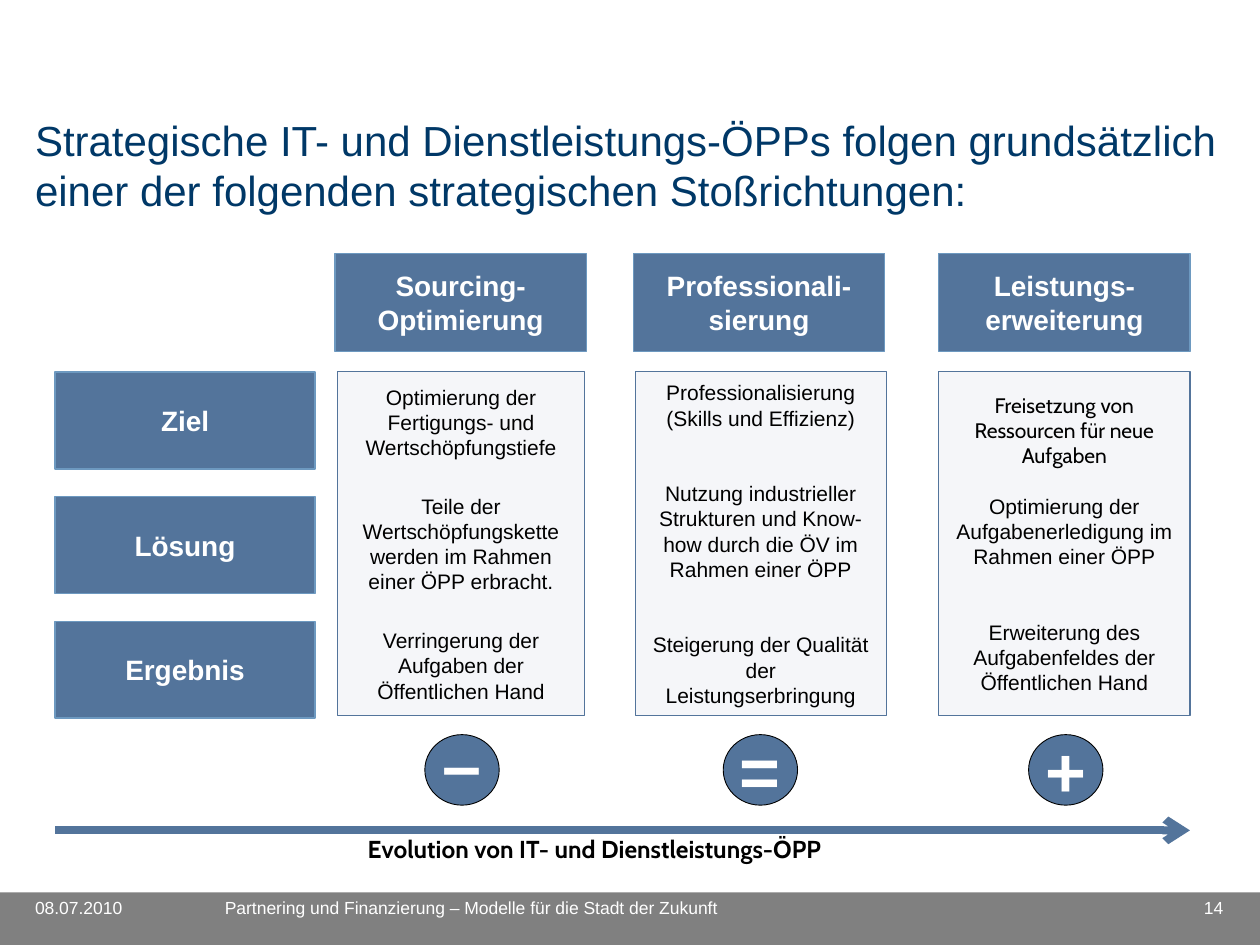
from dataclasses import dataclass

from lxml.etree import SubElement
from pptx import Presentation
from pptx.dml.color import RGBColor
from pptx.enum.shapes import MSO_CONNECTOR, MSO_SHAPE
from pptx.enum.text import MSO_ANCHOR, PP_ALIGN
from pptx.oxml.ns import qn
from pptx.util import Pt


@dataclass(frozen=True)
class Theme:
    blue: str = "53749B"
    edge: str = "6D99C0"
    panel: str = "F5F6F9"
    title: str = "003867"
    footer: str = "808080"
    white: str = "FFFFFF"
    black: str = "000000"
    font: str = "Arial"
    accent_font: str = "Cabin"
    title_size: int = 24
    heading_size: int = 16
    caption_size: int = 14
    body_size: int = 12
    footer_size: int = 10
    sign_size: int = 40
    title_pitch: float = 28.6
    heading_pitch: float = 19.2
    body_pitch: float = 14.4


theme = Theme()
prs = Presentation()
prs.slide_width, prs.slide_height = Pt(720), Pt(540)
slide = prs.slides.add_slide(prs.slide_layouts[6])


def add_block(preset, left, top, width, height, fill, line=None, line_width=0.75):
    block = slide.shapes.add_shape(preset, Pt(left), Pt(top), Pt(width), Pt(height))
    block.shadow.inherit = False
    block.fill.solid()
    block.fill.fore_color.rgb = RGBColor.from_string(fill)
    if line:
        block.line.color.rgb = RGBColor.from_string(line)
        block.line.width = Pt(line_width)
    else:
        block.line.fill.background()
    block.text_frame.vertical_anchor = MSO_ANCHOR.MIDDLE
    return block.text_frame


def write(frame, texts, size, color, bold=False, align=PP_ALIGN.CENTER,
          pitch=None, gaps=(0,), fonts=(theme.font,), inset=None, wrap=True):
    """Fill a frame; gaps and fonts hold one value per paragraph, the last one repeating."""
    frame.word_wrap = wrap
    if inset is not None:
        frame.margin_left = frame.margin_right = Pt(inset)
        frame.margin_top = frame.margin_bottom = Pt(inset)
    for i, text in enumerate(texts):
        paragraph = frame.paragraphs[0] if i == 0 else frame.add_paragraph()
        paragraph.text = text
        paragraph.alignment = align
        if pitch:
            paragraph.line_spacing = Pt(pitch)
        if i:
            paragraph.space_before = Pt(gaps[min(i, len(gaps)) - 1])
        font = paragraph.font
        font.name = fonts[min(i, len(fonts) - 1)]
        font.size, font.bold = Pt(size), bold
        font.color.rgb = RGBColor.from_string(color)


add_block(MSO_SHAPE.RECTANGLE, 0, 510, 720, 30, theme.footer)

title = slide.shapes.add_textbox(Pt(20), Pt(65.5), Pt(677.5), Pt(76.3))
write(title.text_frame,
      ["Strategische IT- und Dienstleistungs-ÖPPs folgen grundsätzlich "
       "einer der folgenden strategischen Stoßrichtungen:"],
      theme.title_size, theme.title, align=PP_ALIGN.LEFT, pitch=theme.title_pitch, inset=0)

# Columns: heading left, panel left, panel width, heading, sign, texts, gaps, fonts
columns = [
    (191.5, 193, 141, "Sourcing-\vOptimierung", "–",
     ["Optimierung der Fertigungs- und Wertschöpfungstiefe",
      "Teile der Wertschöpfungskette werden im Rahmen einer ÖPP erbracht.",
      "Verringerung der Aufgaben der Öffentlichen Hand"],
     (19.2,), (theme.font,)),
    (362, 363, 143.5, "Professionali-\vsierung", "=",
     ["Professionalisierung\v(Skills und Effizienz)",
      "Nutzung industrieller Strukturen und Know-how durch die ÖV im Rahmen einer ÖPP",
      "Steigerung der Qualität der Leistungserbringung"],
     (28.8,), (theme.font,)),
    (536.5, 536.5, 143.5, "Leistungs-\verweiterung", "+",
     ["Freisetzung von Ressourcen für neue Aufgaben",
      "Optimierung der Aufgabenerledigung im Rahmen einer ÖPP",
      "Erweiterung des Aufgabenfeldes der Öffentlichen Hand"],
     (14.4, 28.8), (theme.accent_font, theme.font)),
]
for left, panel_left, panel_width, heading, sign, texts, gaps, fonts in columns:
    header = add_block(MSO_SHAPE.RECTANGLE, left, 144.75, 143.5, 56, theme.blue, theme.edge)
    write(header, [heading], theme.heading_size, theme.white, bold=True,
          pitch=theme.heading_pitch)
    panel = add_block(MSO_SHAPE.RECTANGLE, panel_left, 212.4, panel_width, 196.6,
                      theme.panel, theme.blue)
    write(panel, texts, theme.body_size, theme.black, pitch=theme.body_pitch,
          gaps=gaps, fonts=fonts)
    circle = add_block(MSO_SHAPE.OVAL, left + 51.25, 419.8, 42.5, 40.3,
                       theme.blue, theme.black, 0.5)
    write(circle, [sign], theme.sign_size, theme.white, bold=True, inset=0, wrap=False,
          pitch=40 if sign == "–" else None)

for row, label in enumerate(["Ziel", "Lösung", "Ergebnis"]):
    stage = add_block(MSO_SHAPE.RECTANGLE, 31.5, 212.6 + row * 71.2, 148.5, 55.4,
                      theme.blue, theme.edge)
    write(stage, [label], theme.heading_size, theme.white, bold=True)

evolution = slide.shapes.add_connector(
    MSO_CONNECTOR.STRAIGHT, Pt(31.5), Pt(474.5), Pt(680), Pt(474.5))
evolution.line.color.rgb = RGBColor.from_string(theme.blue)
evolution.line.width = Pt(4.5)
SubElement(evolution.line._get_or_add_ln(), qn("a:tailEnd"), type="arrow")
SubElement(evolution._element.spPr, qn("a:effectLst"))

caption = slide.shapes.add_textbox(Pt(203), Pt(473), Pt(301), Pt(24.5))
write(caption.text_frame, ["Evolution von IT- und Dienstleistungs-ÖPP"],
      theme.caption_size, theme.black, bold=True, align=PP_ALIGN.LEFT,
      fonts=(theme.accent_font,))

footer_items = [
    (645, 54, "14", PP_ALIGN.RIGHT),
    (20, 96, "08.07.2010", PP_ALIGN.LEFT),
    (128.5, 502, "Partnering und Finanzierung – Modelle für die Stadt der Zukunft",
     PP_ALIGN.LEFT),
]
for left, width, text, align in footer_items:
    item = slide.shapes.add_textbox(Pt(left), Pt(512.6), Pt(width), Pt(23.8))
    write(item.text_frame, [text], theme.footer_size, theme.white, align=align, inset=0)

prs.save("out.pptx")
